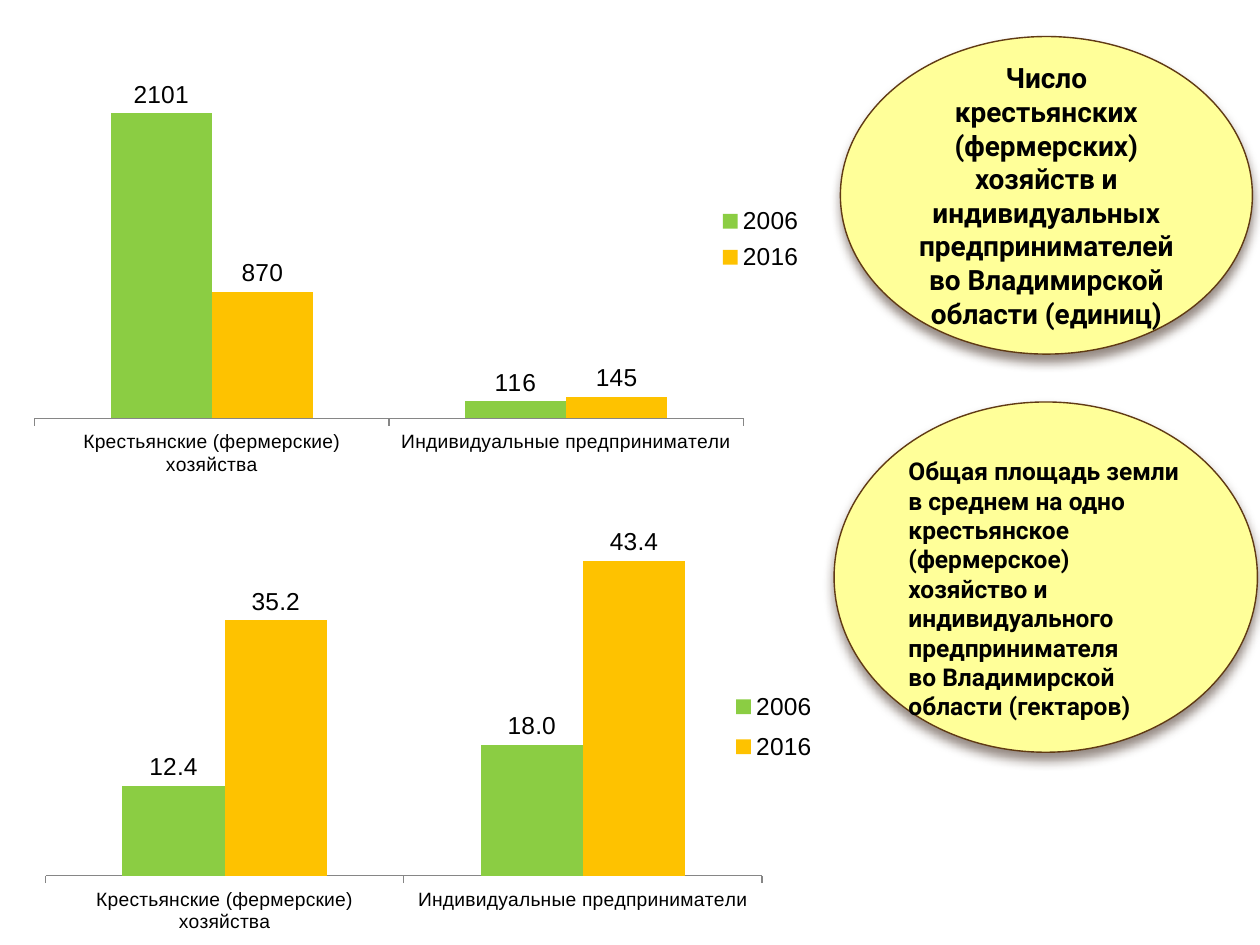
from lxml import etree
from pptx import Presentation
from pptx.chart.data import CategoryChartData
from pptx.dml.color import RGBColor
from pptx.enum.chart import XL_CHART_TYPE, XL_LABEL_POSITION, XL_LEGEND_POSITION, XL_TICK_MARK
from pptx.enum.shapes import MSO_SHAPE
from pptx.enum.text import MSO_ANCHOR, PP_ALIGN
from pptx.oxml import parse_xml
from pptx.oxml.ns import nsdecls, qn
from pptx.util import Inches, Pt

COLUMNS = XL_CHART_TYPE.COLUMN_CLUSTERED
OUTSIDE_END = XL_LABEL_POSITION.OUTSIDE_END
RIGHT = XL_LEGEND_POSITION.RIGHT
TICK_OUT, TICK_NONE = XL_TICK_MARK.OUTSIDE, XL_TICK_MARK.NONE
OVAL = MSO_SHAPE.OVAL
MIDDLE = MSO_ANCHOR.MIDDLE
LEFT, CENTER = PP_ALIGN.LEFT, PP_ALIGN.CENTER

BLACK = RGBColor(0x00, 0x00, 0x00)
GRAY = RGBColor(0x86, 0x86, 0x86)
GREEN = RGBColor(0x8B, 0xCD, 0x43)
AMBER = RGBColor(0xFE, 0xC2, 0x00)
YELLOW = RGBColor(0xFF, 0xFF, 0x99)
BROWN = RGBColor(0x60, 0x3A, 0x14)
SHADOW = RGBColor(0x4E, 0x3B, 0x30)

CATEGORIES = ["Крестьянские (фермерские) хозяйства", "Индивидуальные предприниматели"]
YEARS = {"2006": GREEN, "2016": AMBER}

CHARTS = [
    {"box": (0, 0.21, 6.9, 3.86), "values": [(2101, 116), (870, 145)],
     "format": "General", "top": 2500,
     "plot": (0.04, 0.06, 0.815, 0.746), "legend": (0.82, 0.355, 0.11, 0.165)},
    {"box": (0.12, 3.79, 6.73, 3.75), "values": [(12.4, 18.0), (35.2, 43.4)],
     "format": "0.0", "top": 50,
     "plot": (0.036, 0.075, 0.845, 0.768), "legend": (0.84, 0.43, 0.11, 0.195)},
]

CAPTIONS = [
    {"box": (6.67, 0.29, 3.27, 2.52), "size": 16, "align": CENTER, "top_inset": 0.05,
     "lines": ["Число крестьянских (фермерских) хозяйств и индивидуальных "
               "предпринимателей во Владимирской области (единиц)"]},
    {"box": (6.62, 3.19, 3.36, 2.78), "size": 14, "align": LEFT, "top_inset": 0.23,
     "lines": ["Общая площадь земли в среднем на одно",
               "крестьянское (фермерское) хозяйство и \v"
               "индивидуального предпринимателя\v"
               "во Владимирской области (гектаров)"]},
]


def style_font(font, name, size, bold=False):
    font.name, font.size, font.bold = name, Pt(size), bold
    font.color.rgb = BLACK


def manual_layout(box, inner=False):
    layout = parse_xml(f"<c:layout {nsdecls('c')}><c:manualLayout/></c:layout>")
    settings = [("layoutTarget", "inner")] if inner else []
    settings += [("xMode", "edge"), ("yMode", "edge"), *zip("xywh", box)]
    for tag, value in settings:
        etree.SubElement(layout[0], qn(f"c:{tag}")).set("val", str(value))
    return layout


def place(parent, index, layout):
    for previous in parent.findall(qn("c:layout")):
        parent.remove(previous)
    parent.insert(index, layout)


def add_comparison(slide, spec):
    data = CategoryChartData(number_format=spec["format"])
    data.categories = CATEGORIES
    for year, values in zip(YEARS, spec["values"]):
        data.add_series(year, values)
    chart = slide.shapes.add_chart(COLUMNS, *map(Inches, spec["box"]), data).chart
    style_font(chart.font, "Roboto", 10)
    chart.has_title = False

    bars = chart.plots[0]
    bars.gap_width, bars.overlap, bars.vary_by_categories = 150, 0, False
    for series, color in zip(bars.series, YEARS.values()):
        series.format.fill.solid()
        series.format.fill.fore_color.rgb = color
        labels = series.data_labels
        labels.show_value = True
        labels.position = OUTSIDE_END
        labels.number_format, labels.number_format_is_linked = spec["format"], False
        style_font(labels.font, "Arial", 14)

    names = chart.category_axis
    names.major_tick_mark, names.minor_tick_mark = TICK_OUT, TICK_NONE
    names.format.line.color.rgb = GRAY
    style_font(names.tick_labels.font, "Arial", 11)
    scale = chart.value_axis
    scale.minimum_scale, scale.maximum_scale = 0, spec["top"]
    scale.has_major_gridlines = False
    scale.visible = False

    chart.has_legend = True
    legend = chart.legend
    legend.position = RIGHT
    legend.include_in_layout = False
    style_font(legend.font, "Arial", 14)
    place(legend._element, 1, manual_layout(spec["legend"]))
    place(chart._chartSpace.chart.plotArea, 0, manual_layout(spec["plot"], inner=True))


def add_caption(slide, spec):
    oval = slide.shapes.add_shape(OVAL, *map(Inches, spec["box"]))
    oval.fill.solid()
    oval.fill.fore_color.rgb = YELLOW
    oval.line.color.rgb = BROWN
    oval.line.width = Pt(0.79)
    oval._element.spPr.append(parse_xml(
        f'<a:effectLst {nsdecls("a")}><a:outerShdw blurRad="{Pt(6)}" dist="{Pt(4)}" '
        f'dir="5400000" rotWithShape="0"><a:srgbClr val="{SHADOW}">'
        '<a:alpha val="60000"/></a:srgbClr></a:outerShdw></a:effectLst>'))
    frame = oval.text_frame
    frame.word_wrap = True
    frame.vertical_anchor = MIDDLE
    frame.margin_top = Inches(spec["top_inset"])
    frame.text = "\n".join(spec["lines"])
    for paragraph in frame.paragraphs:
        paragraph.alignment = spec["align"]
        for run in paragraph.runs:
            style_font(run.font, "Roboto", spec["size"], bold=True)


def main():
    deck = Presentation()
    deck.slide_width, deck.slide_height = Inches(10), Inches(7.5)
    slide = deck.slides.add_slide(deck.slide_layouts[6])
    for spec in CHARTS:
        add_comparison(slide, spec)
    for spec in CAPTIONS:
        add_caption(slide, spec)
    deck.save("out.pptx")


if __name__ == "__main__":
    main()
